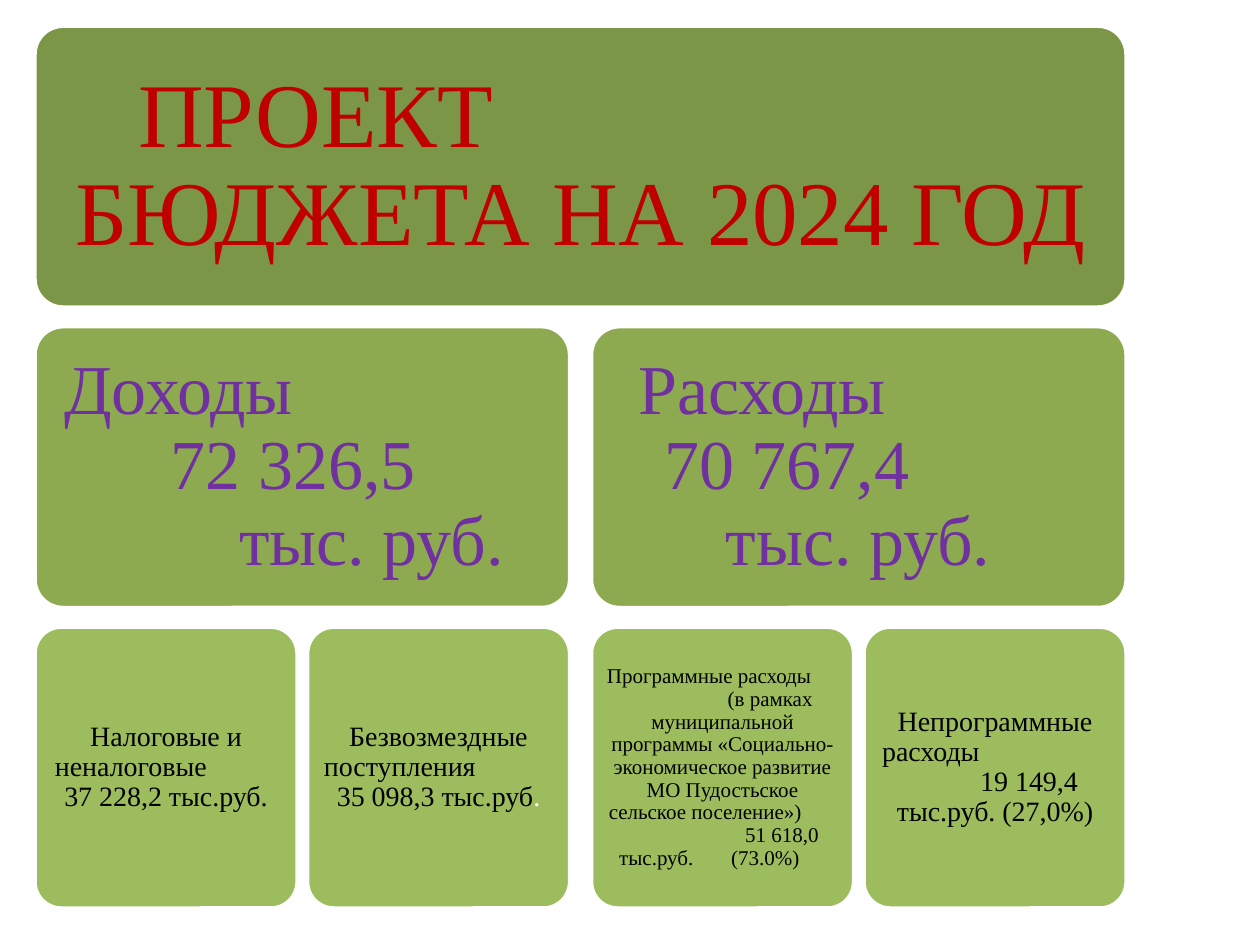
from pptx import Presentation
from pptx.dml.color import RGBColor
from pptx.enum.shapes import MSO_SHAPE
from pptx.enum.text import MSO_ANCHOR, MSO_AUTO_SIZE, PP_ALIGN
from pptx.oxml.ns import qn
from pptx.util import Pt
from lxml import etree

ROUND = MSO_SHAPE.ROUNDED_RECTANGLE
MIDDLE = MSO_ANCHOR.MIDDLE
FIXED = MSO_AUTO_SIZE.NONE
LEFT, CENTER = PP_ALIGN.LEFT, PP_ALIGN.CENTER

FONT = "Times New Roman"
WHITE = RGBColor(0xFF, 0xFF, 0xFF)
BLACK = RGBColor(0, 0, 0)
RED = RGBColor(0xC0, 0, 0)
PURPLE = RGBColor(0x70, 0x30, 0xA0)
DARK = RGBColor(0x7C, 0x96, 0x47)
GREEN = RGBColor(0x8D, 0xAA, 0x51)
LIGHT = RGBColor(0x9C, 0xBC, 0x5D)

# A line is (text, indent in points); an indent of None centres it.
TITLE = [("ПРОЕКТ", 39), ("БЮДЖЕТА НА 2024 ГОД", None)]
HALVES = [
    {
        "lines": [("Доходы", 0), ("72 326,5", 61), ("тыс. руб.", 100)],
        "parts": [
            {"size": 16, "inset": 5,
             "lines": [("Налоговые и", None), ("неналоговые", 2),
                       ("37 228,2 тыс.руб.", None)]},
            {"size": 16, "inset": 5, "tail": ".",
             "lines": [("Безвозмездные", None), ("поступления", 0),
                       ("35 098,3 тыс.руб", None)]},
        ],
    },
    {
        "lines": [("Расходы", 10), ("70 767,4", 25), ("тыс. руб.", 60)],
        "parts": [
            {"size": 12, "inset": 3.5,
             "lines": [("Программные расходы", 1), ("(в рамках", 70),
                       ("муниципальной программы «Социально-экономическое "
                        "развитие МО Пудостьское", None),
                       ("сельское поселение»)", 2), ("51 618,0", 80),
                       ("тыс.руб.\t(73.0%)", 8)]},
            {"size": 16, "inset": 5,
             "lines": [("Непрограммные", None), ("расходы", 1),
                       ("19 149,4", 57), ("тыс.руб. (27,0%)", None)]},
        ],
    },
]
TAB = 87  # column of the share after the tab

X, Y, WIDE, HIGH = 20, 15, 623.5, 160.5
ROW_GAP, HALF_GAP, PART_GAP = 11.2, 12.5, 6
HALF = (WIDE - HALF_GAP) / 2
PART = (HALF - PART_GAP) / 2


def add_run(par, text, size, color):
    run = par.add_run()
    run.text = text
    run.font.name = FONT
    run.font.size = Pt(size)
    run.font.bold = False
    run.font.color.rgb = color


def write(shape, lines, size=16, color=BLACK, inset=5, tail=""):
    frame = shape.text_frame
    frame.word_wrap = True
    frame.auto_size = FIXED
    frame.vertical_anchor = MIDDLE
    frame.margin_left = frame.margin_right = Pt(inset)
    frame.margin_top = frame.margin_bottom = Pt(inset)
    for i, (text, indent) in enumerate(lines):
        par = frame.add_paragraph() if i else frame.paragraphs[0]
        par.alignment = CENTER if indent is None else LEFT
        par.line_spacing = 0.9
        par.space_before = par.space_after = Pt(0)
        props = par._p.get_or_add_pPr()
        props.set("marL", "0")
        props.set("indent", str(Pt(indent or 0)))
        if "\t" in text:
            stops = etree.SubElement(props, qn("a:tabLst"))
            etree.SubElement(stops, qn("a:tab"), pos=str(Pt(TAB)), algn="l")
        add_run(par, text, size, color)
    if tail:
        add_run(par, tail, size, WHITE)


def add_box(slide, x, row, width, fill):
    top = Y + row * (HIGH + ROW_GAP)
    box = slide.shapes.add_shape(ROUND, Pt(x), Pt(top), Pt(width), Pt(HIGH))
    box.adjustments[0] = 0.1
    box.shadow.inherit = False
    box.fill.solid()
    box.fill.fore_color.rgb = fill
    box.line.color.rgb = WHITE
    box.line.width = Pt(2)
    return box


def main():
    deck = Presentation()
    deck.slide_width, deck.slide_height = Pt(720), Pt(540)
    slide = deck.slides.add_slide(deck.slide_layouts[5])

    box = add_box(slide, X, 0, WIDE, DARK)
    title = slide.shapes.title
    title.left, title.top = box.left, box.top
    title.width, title.height = box.width, box.height
    box._element.addnext(title._element)
    write(title, TITLE, size=52, color=RED, inset=20)

    for i, half in enumerate(HALVES):
        x = X + i * (HALF + HALF_GAP)
        box = add_box(slide, x, 1, HALF, GREEN)
        write(box, half["lines"], size=40, color=PURPLE, inset=12)
        for j, part in enumerate(half["parts"]):
            box = add_box(slide, x + j * (PART + PART_GAP), 2, PART, LIGHT)
            write(box, **part)

    deck.save("out.pptx")


if __name__ == "__main__":
    main()
